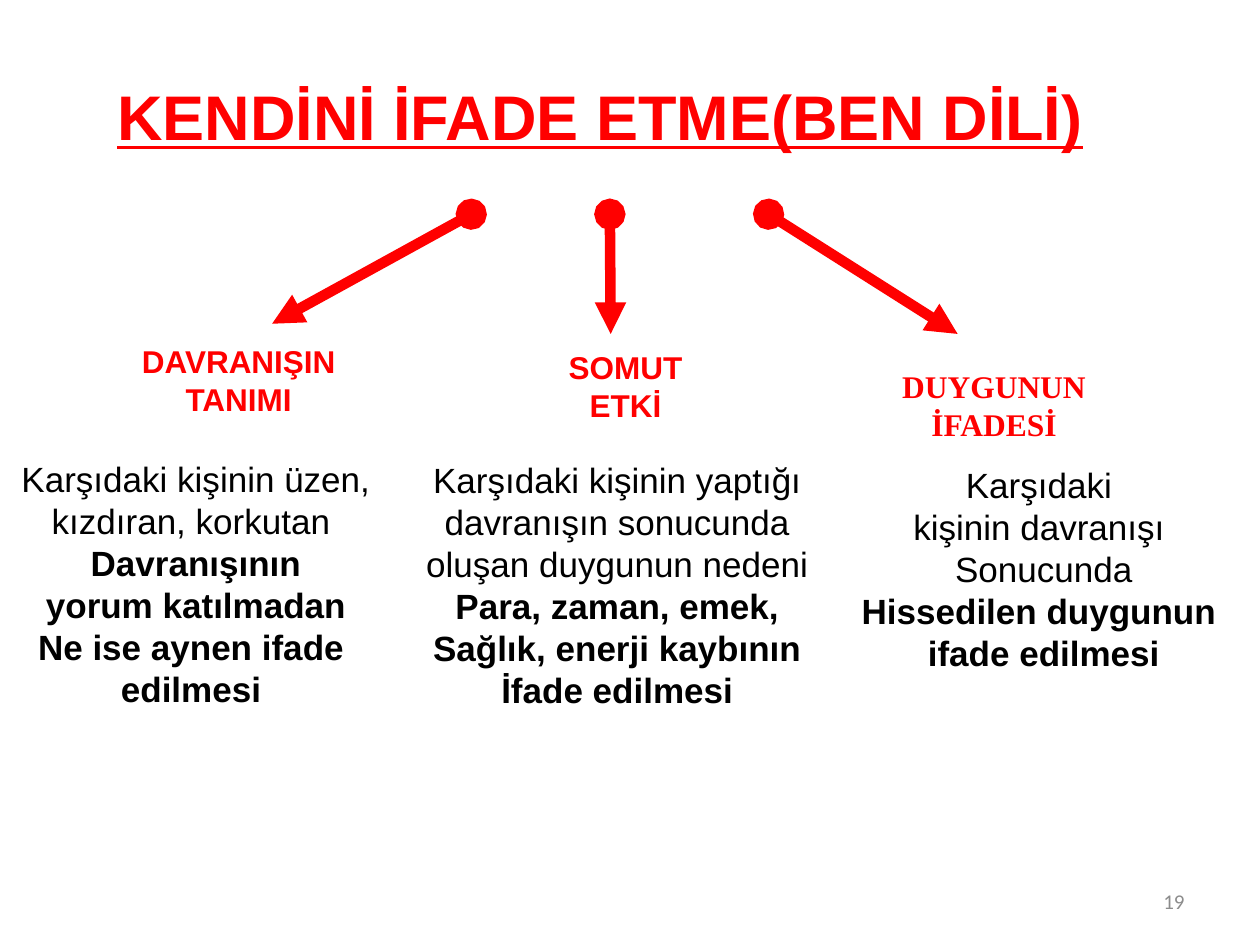
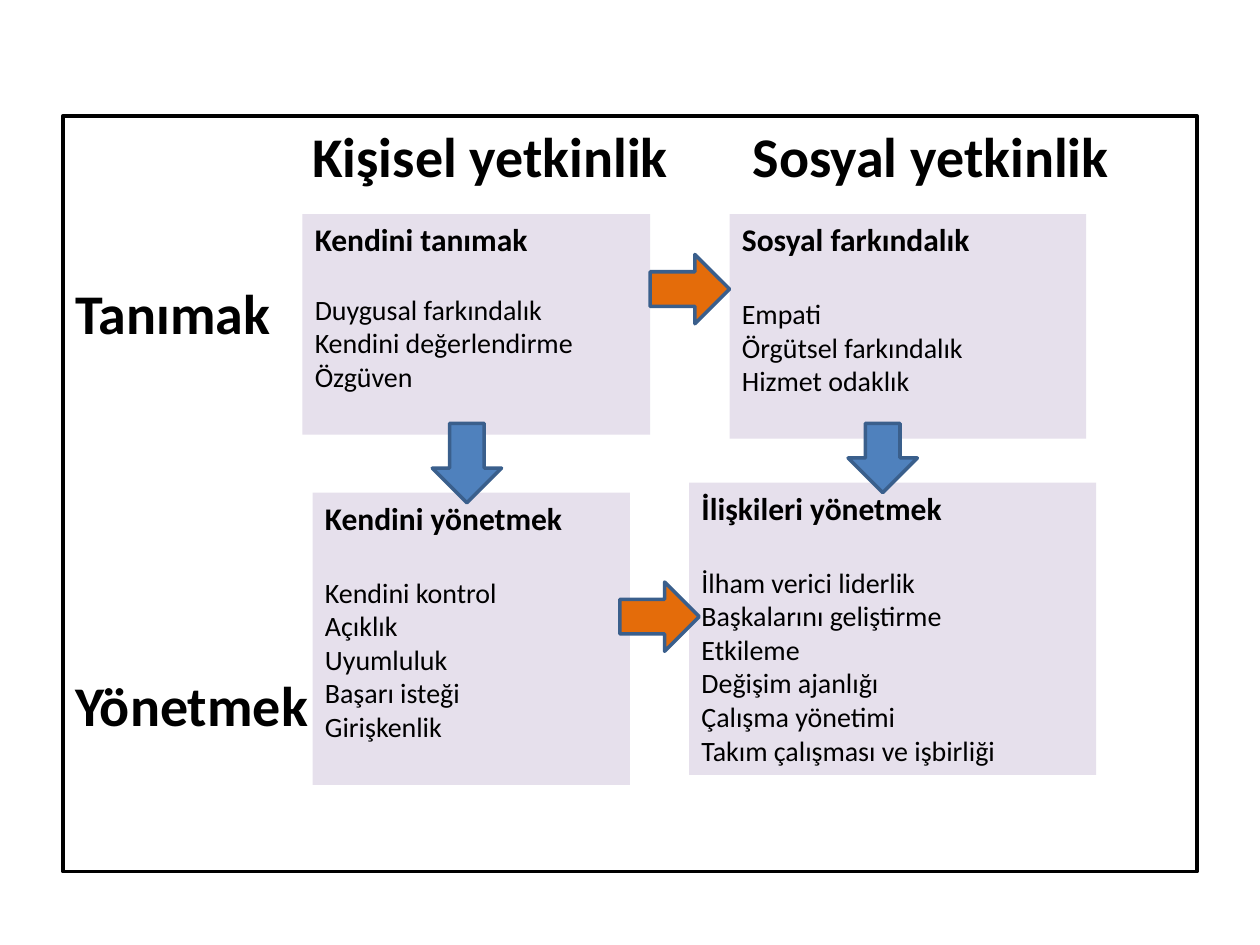
import pptx
import pptx.util
import pptx.dml.color
import pptx.enum.shapes
import pptx.enum.text
import pptx.oxml
import pptx.oxml.ns
from lxml import etree

Pt = pptx.util.Pt
SHAPE = pptx.enum.shapes.MSO_SHAPE
ALIGN = pptx.enum.text.PP_ALIGN
ANCHOR = pptx.enum.text.MSO_ANCHOR
qn = pptx.oxml.ns.qn

COLORS = {"red": "FF0000", "black": "000000", "white": "FFFFFF", "gray": "8C8C8C",
          "lilac": "E6E0EC", "orange": "E46C0A", "blue": "4F81BD", "edge": "3A5F8C"}
RGB = {name: pptx.dml.color.RGBColor.from_string(c) for name, c in COLORS.items()}


def write(sp, lines, font, size, color="black", bold=False, align=ALIGN.LEFT,
          anchor=ANCHOR.TOP):
    """Fill a shape with lines; a line is a string or (string, bold, size)."""
    tf = sp.text_frame
    tf.word_wrap = True
    tf.vertical_anchor = anchor
    for i, line in enumerate(lines):
        text, b, sz = (line, bold, size) if isinstance(line, str) else line
        p = tf.paragraphs[0] if i == 0 else tf.add_paragraph()
        p.alignment = align
        r = p.add_run()
        r.text = text
        r.font.name, r.font.size, r.font.bold = font, Pt(sz), b
        r.font.color.rgb = RGB[color]
    return tf


def add_shape(s, kind, box, fill, line=None, width=2):
    sp = s.shapes.add_shape(kind, *map(Pt, box))
    sp.shadow.inherit = False
    sp.fill.solid()
    sp.fill.fore_color.rgb = RGB[fill]
    if line:
        sp.line.color.rgb = RGB[line]
        sp.line.width = Pt(width)
    else:
        sp.line.fill.background()
    return sp


prs = pptx.Presentation()
prs.slide_width, prs.slide_height = Pt(720), Pt(540)
blank = prs.slide_layouts[6]

# Slide 1: the three parts of the "I" language
s = prs.slides.add_slide(blank)
sp = s.shapes.add_textbox(Pt(516), Pt(500.5), Pt(168), Pt(28.75))
write(sp, ["19"], "Calibri", 12, "gray", align=ALIGN.RIGHT, anchor=ANCHOR.MIDDLE)

sp = s.shapes.add_textbox(Pt(43), Pt(43.2), Pt(600), Pt(45.4))
tf = write(sp, ["KENDİNİ İFADE ETME(BEN DİLİ)"], "Arial", 36, "red", True,
           ALIGN.CENTER, ANCHOR.MIDDLE)
tf.paragraphs[0].runs[0].font.underline = True

# Arrows from the title to the parts
for x1, x2, y2 in [(269.3, 155.5, 185), (348.5, 349, 190.8), (439.2, 547.2, 190.8)]:
    line = s.shapes.add_connector(pptx.enum.shapes.MSO_CONNECTOR.STRAIGHT,
                                  Pt(x1), Pt(122.4), Pt(x2), Pt(y2))
    line.line.color.rgb = RGB["red"]
    line.line.width = Pt(6)
    ln = line.line._get_or_add_ln()
    etree.SubElement(ln, qn("a:headEnd"), type="oval")
    etree.SubElement(ln, qn("a:tailEnd"), type="triangle")
    etree.SubElement(line._element.spPr, qn("a:effectLst"))

# Part headings
headings = [
    ((66.4, 187, 140, 59.8), "Arial", ["DAVRANIŞIN", "TANIMI"]),
    ((297.4, 190.8, 120.2, 59.8), "Arial", ["SOMUT", "ETKİ"]),
    ((465.8, 196, 204.5, 70.6), "Times New Roman", ["DUYGUNUN", "İFADESİ"]),
]
for box, font, lines in headings:
    sp = s.shapes.add_textbox(*map(Pt, box))
    write(sp, lines, font, 18, "red", True, ALIGN.CENTER, ANCHOR.MIDDLE)

# Part descriptions: plain lines, then bold lines
descriptions = [
    ((0, 257.8, 223.9, 151.2),
     ["Karşıdaki kişinin üzen, kızdıran, korkutan "],
     ["Davranışının", "yorum katılmadan", "Ne ise aynen ifade ", "edilmesi "]),
    ((235.4, 258.5, 234.7, 151.2),
     ["Karşıdaki kişinin yaptığı", "davranışın sonucunda oluşan duygunun nedeni "],
     ["Para, zaman, emek, Sağlık, enerji kaybının", "İfade edilmesi"]),
    ((473, 261.4, 247, 151.2),
     ["Karşıdaki ", "kişinin davranışı ", "Sonucunda"],
     ["Hissedilen duygunun ", "ifade edilmesi"]),
]
for box, plain, strong in descriptions:
    sp = s.shapes.add_textbox(*map(Pt, box))
    write(sp, plain + [(text, True, 20) for text in strong], "Arial", 20,
          align=ALIGN.CENTER)

# Slide 2: competence matrix
s = prs.slides.add_slide(blank)
frame = add_shape(s, SHAPE.RECTANGLE, (36, 66.2, 648, 432), "white", "black")
tf = write(frame, ["\tKişisel yetkinlik\tSosyal yetkinlik", "Tanımak", "Yönetmek"],
           "Calibri", 32, bold=True)
tf.paragraphs[1].space_before = Pt(51)
tf.paragraphs[2].space_before = Pt(185.5)
tabs = etree.SubElement(tf.paragraphs[0]._p.get_or_add_pPr(), qn("a:tabLst"))
for stop in (135.4, 387):
    etree.SubElement(tabs, qn("a:tab"), pos=str(int(Pt(stop))), algn="l")

# Cards: box, gap under the heading, heading, items
cards = [
    ((172.8, 122.4, 198.7, 126), 19.5, "Kendini tanımak",
     ["Duygusal farkındalık", "Kendini değerlendirme", "Özgüven"]),
    ((416.9, 122.4, 203.8, 128.2), 22, "Sosyal farkındalık",
     ["Empati", "Örgütsel farkındalık", "Hizmet odaklık"]),
    ((178.6, 281.5, 181.4, 167), 22, "Kendini yönetmek",
     ["Kendini kontrol", "Açıklık", "Uyumluluk", "Başarı isteği", "Girişkenlik"]),
    ((393.8, 275.8, 232.6, 167), 22, "İlişkileri yönetmek",
     ["İlham verici liderlik", "Başkalarını geliştirme", "Etkileme",
      "Değişim ajanlığı", "Çalışma yönetimi", "Takım çalışması ve işbirliği"]),
]
for box, gap, heading, items in cards:
    sp = add_shape(s, SHAPE.RECTANGLE, box, "lilac")
    tf = write(sp, [(heading, True, 18)] + items, "Calibri", 16)
    tf.paragraphs[0].space_after = Pt(gap)

# Arrows between the cards
arrows = [
    (SHAPE.RIGHT_ARROW, "orange", (371.5, 145.4, 45.4, 39.6)),
    (SHAPE.RIGHT_ARROW, "orange", (354.2, 332.6, 45.4, 39.6)),
    (SHAPE.DOWN_ARROW, "blue", (247, 241.9, 39.6, 45.4)),
    (SHAPE.DOWN_ARROW, "blue", (484.6, 241.9, 39.6, 39.6)),
]
for kind, fill, box in arrows:
    add_shape(s, kind, box, fill, "edge")

prs.save("out.pptx")
